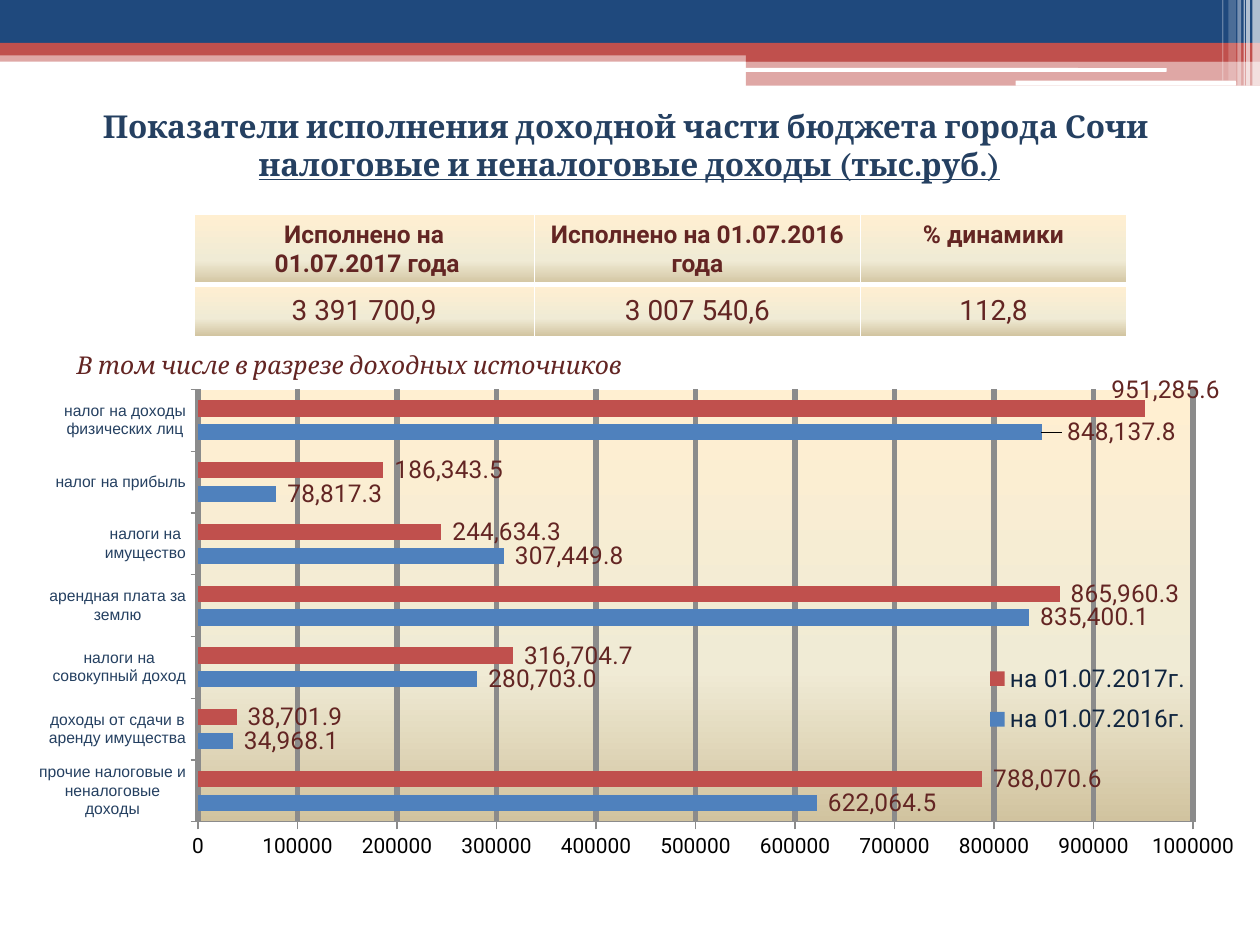
from lxml import etree
from pptx import Presentation
from pptx.chart.data import CategoryChartData
from pptx.dml.color import RGBColor
from pptx.enum.chart import XL_CHART_TYPE, XL_LABEL_POSITION, XL_LEGEND_POSITION, XL_TICK_MARK
from pptx.enum.shapes import MSO_SHAPE
from pptx.enum.text import MSO_ANCHOR, MSO_AUTO_SIZE, PP_ALIGN
from pptx.oxml import parse_xml
from pptx.oxml.ns import nsdecls, qn
from pptx.util import Inches, Pt

RECT, ROUND = MSO_SHAPE.RECTANGLE, MSO_SHAPE.ROUNDED_RECTANGLE
LEFT, CENTER = PP_ALIGN.LEFT, PP_ALIGN.CENTER
TOP, MIDDLE = MSO_ANCHOR.TOP, MSO_ANCHOR.MIDDLE
OUTSIDE = XL_TICK_MARK.OUTSIDE

COLORS = {"navy": "1F497D", "red": "C0504D", "blue": "4F81BD", "white": "FFFFFF",
          "title": "254061", "maroon": "632523", "legend": "0F243E",
          "black": "000000", "grid": "8B8B8B"}
RGB = {name: RGBColor.from_string(value) for name, value in COLORS.items()}
GRADIENT = (
    f'<a:gradFill {nsdecls("a")} rotWithShape="1"><a:gsLst>'
    '<a:gs pos="0"><a:srgbClr val="FFEFD1"/></a:gs>'
    '<a:gs pos="65000"><a:srgbClr val="F0EBD5"/></a:gs>'
    '<a:gs pos="100000"><a:srgbClr val="D1C39F"/></a:gs>'
    '</a:gsLst><a:lin ang="5400000" scaled="0"/></a:gradFill>')


def set_font(font, size, color, name, bold=False, italic=False, underline=False):
    font.size, font.name = Pt(size), name
    font.color.rgb = RGB[color]
    font.bold, font.italic, font.underline = bold, italic, underline


def write(tf, text, align=LEFT, underline_last=False, **style):
    """Write one paragraph per line of text."""
    tf.word_wrap = True
    lines = text.split("\n")
    for i, line in enumerate(lines):
        p = tf.paragraphs[0] if i == 0 else tf.add_paragraph()
        p.alignment = align
        r = p.add_run()
        r.text = line
        set_font(r.font, underline=underline_last and i == len(lines) - 1, **style)


prs = Presentation()
prs.slide_width, prs.slide_height = Inches(10), Inches(7.5)
s = prs.slides.add_slide(prs.slide_layouts[5])

# Header bands and the stripes at the right edge: shape, box, colour, opacity in %
bands = [
    (RECT, 0, 0.4, 10, 0.09, "red", 50),
    (RECT, 0, 0, 10, 0.34, "navy", 100),
    (RECT, 0, 0.34, 10, 0.1, "red", 100),
    (RECT, 5.92, 0.39, 4.08, 0.1, "red", 100),
    (RECT, 5.92, 0.48, 4.08, 0.2, "red", 50),
    (ROUND, 5.91, 0.54, 3.35, 0.03, "white", 100),
    (ROUND, 8.06, 0.64, 1.75, 0.04, "white", 100),
]
stripes = [(9.94, 0.06, 0.68, 65), (9.89, 0.03, 0.68, 65), (9.87, 0.01, 0.68, 60),
           (9.82, 0.03, 0.68, 40), (9.75, 0.06, 0.64, 20), (9.7, 0.01, 0.64, 30)]
bands += [(RECT, x, 0, w, h, "white", alpha) for x, w, h, alpha in stripes]
for kind, x, y, w, h, color, alpha in bands:
    sp = s.shapes.add_shape(kind, Inches(x), Inches(y), Inches(w), Inches(h))
    sp.shadow.inherit = False
    sp.line.fill.background()
    sp.fill.solid()
    sp.fill.fore_color.rgb = RGB[color]
    if alpha < 100:
        clr = sp.fill._xPr.find(".//" + qn("a:srgbClr"))
        etree.SubElement(clr, qn("a:alpha"), val=str(alpha * 1000))

# Chart of revenue sources
sources = ["прочие налоговые и неналоговые доходы", "доходы от сдачи в аренду имущества",
           "налоги на совокупный доход", "арендная плата за землю",
           "налоги на имущество", "налог на прибыль", "налог на доходы физических лиц"]
# name, colour, shift of the last label, values
series = [
    ("на 01.07.2016г.", "blue", (0.012, 0),
     [622064.5, 34968.1, 280703, 835400.1, 307449.8, 78817.3, 848137.8]),
    ("на 01.07.2017г.", "red", (-0.037, -0.033),
     [788070.6, 38701.9, 316704.7, 865960.3, 244634.3, 186343.5, 951285.6]),
]
LABEL_FORMAT = "_-* #,##0.0_р_._-"
data = CategoryChartData(number_format=LABEL_FORMAT)
data.categories = sources
for name, _, _, values in series:
    data.add_series(name, values)
chart = s.shapes.add_chart(XL_CHART_TYPE.BAR_CLUSTERED, Inches(0.31), Inches(2.96),
                           Inches(9.57), Inches(4.54), data).chart
chart.has_title = False
set_font(chart.font, 18, "black", "Cambria")
plot = chart.plots[0]
plot.gap_width, plot.overlap, plot.vary_by_categories = 134, -45, False

LAYOUT = f'<c:layout {nsdecls("c")}><c:manualLayout>%s</c:manualLayout></c:layout>'
EDGES = '<c:xMode val="edge"/><c:yMode val="edge"/>'
BOX = '<c:x val="%s"/><c:y val="%s"/><c:w val="%s"/><c:h val="%s"/>'

for ser, (_, color, shift, _) in zip(plot.series, series):
    ser.format.fill.solid()
    ser.format.fill.fore_color.rgb = RGB[color]
    labels = ser.data_labels
    labels.show_value = True
    labels.position = XL_LABEL_POSITION.OUTSIDE_END
    labels.number_format, labels.number_format_is_linked = LABEL_FORMAT, False
    set_font(labels.font, 14, "maroon", "Roboto")
    last = ser.points[len(sources) - 1].data_label
    set_font(last.font, 14, "maroon", "Roboto")
    last.position = XL_LABEL_POSITION.OUTSIDE_END
    idx = labels._element.find(qn("c:dLbl")).find(qn("c:idx"))
    idx.addnext(parse_xml(LAYOUT % ('<c:x val="%s"/><c:y val="%s"/>' % shift)))

# Axes
cat, val = chart.category_axis, chart.value_axis
set_font(cat.tick_labels.font, 9, "title", "Arial")
set_font(val.tick_labels.font, 12, "black", "Roboto")
val.minimum_scale, val.maximum_scale, val.major_unit = 0, 1000000, 100000
val.tick_labels.number_format, val.tick_labels.number_format_is_linked = "General", False
val.has_major_gridlines = True
for axis in (cat, val):
    axis.major_tick_mark = OUTSIDE
for line, width in ((val.major_gridlines.format.line, 3),
                    (cat.format.line, 0.75), (val.format.line, 0.75)):
    line.color.rgb, line.width = RGB["grid"], Pt(width)

# Legend over the plot, plot position and plot fill
chart.has_legend = True
legend = chart.legend
legend.position, legend.include_in_layout = XL_LEGEND_POSITION.RIGHT, True
set_font(legend.font, 14, "legend", "Roboto")
area = chart._chartSpace.find(".//" + qn("c:plotArea"))
for parent in (area, legend._element):
    for old in parent.findall(qn("c:layout")):
        parent.remove(old)
legend._element.find(qn("c:legendPos")).addnext(
    parse_xml(LAYOUT % (EDGES + BOX % (0.78, 0.49, 0.18, 0.16))))
area.insert(0, parse_xml(LAYOUT % ('<c:layoutTarget val="inner"/>' + EDGES
                                   + BOX % (0.127, 0.029, 0.831, 0.756))))
etree.SubElement(area, qn("c:spPr")).append(parse_xml(GRADIENT))

# Title
title = s.shapes.title
title.left, title.top, title.width, title.height = map(Inches, (0.31, 0.8, 9.37, 0.71))
tf = title.text_frame
tf.auto_size, tf.vertical_anchor = MSO_AUTO_SIZE.NONE, TOP
write(tf, "Показатели исполнения доходной части бюджета города Сочи \n"
      "налоговые и неналоговые доходы (тыс.руб.)", CENTER, underline_last=True,
      size=18, color="title", name="Cambria", bold=True)

# Table of totals
rows = [["Исполнено на\n 01.07.2017 года", "Исполнено на 01.07.2016 года", "% динамики"],
        ["3 391 700,9", "3 007 540,6", "112,8"]]
table = s.shapes.add_table(2, 3, Inches(1.54), Inches(1.7), Inches(7.4), Inches(0.97)).table
for column, width in zip(table.columns, (2.7, 2.59, 2.11)):
    column.width = Inches(width)
for row, height in zip(table.rows, (0.56, 0.41)):
    row.height = Inches(height)
for i, row in enumerate(rows):
    for j, text in enumerate(row):
        cell = table.cell(i, j)
        write(cell.text_frame, text, CENTER, size=16 if i else 14, color="maroon",
              name="Roboto", bold=i == 0)
        if i:
            cell.vertical_anchor = MIDDLE
            cell.margin_left = cell.margin_right = cell.margin_top = Inches(0.01)
            cell.margin_bottom = 0
        tcPr = cell._tc.get_or_add_tcPr()
        for side in "LRTB":
            heavy = (i, side) in ((0, "B"), (1, "T"))
            tcPr.append(parse_xml(
                f'<a:ln{side} {nsdecls("a")} w="{Pt(3 if heavy else 1)}"><a:solidFill>'
                f'<a:srgbClr val="{COLORS["white"]}"/></a:solidFill></a:ln{side}>'))
        tcPr.append(parse_xml(GRADIENT))

# Chart caption
caption = s.shapes.add_textbox(Inches(0.51), Inches(2.73), Inches(4.72), Inches(0.34))
write(caption.text_frame, "В том числе в разрезе доходных источников",
      size=14, color="maroon", name="Cambria", italic=True)

prs.save("out.pptx")
